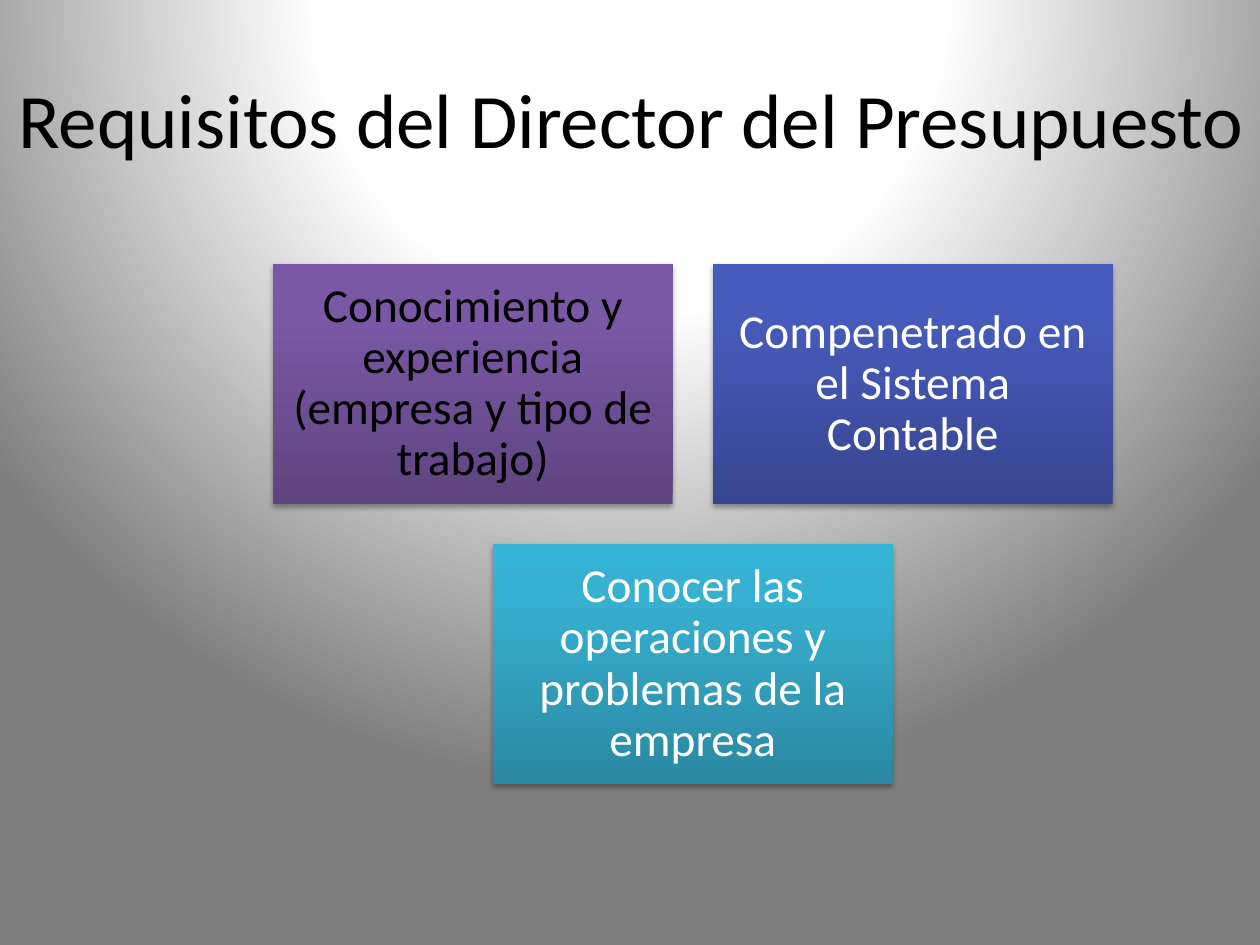
from lxml import etree
from pptx import Presentation
from pptx.dml.color import RGBColor
from pptx.enum.shapes import MSO_SHAPE as Shape
from pptx.enum.text import MSO_ANCHOR as Anchor, PP_ALIGN as Align
from pptx.oxml.ns import qn
from pptx.util import Cm, Pt

BOX_W, BOX_H, GAP = 8.06, 4.84, 0.81
LEFT, TOP = 5.5, 5.32
REQUIREMENTS = [
    # column, row, text, text colour, gradient from bottom to top
    (0, 0, "Conocimiento y experiencia (empresa y tipo de trabajo)",
     "000000", ("5F4480", "7B58A6", "7C57A8")),
    (1, 0, "Compenetrado en el Sistema Contable",
     "FFFFFF", ("374691", "475BBC", "455ABF")),
    (0.5, 1, "Conocer las operaciones y problemas de la empresa",
     "FFFFFF", ("2A88A2", "37B1D2", "34B4D6")),
]


def rgb(value):
    return RGBColor.from_string(value)


def add_node(parent, tag, **attrs):
    node = etree.SubElement(parent, qn(tag))
    for name, value in attrs.items():
        node.set(name, str(value))
    return node


def set_gradient(fill, owner, stops):
    """Give the fill its (percent, colour) stops; the direction is added after."""
    fill.gradient()
    grad = owner.find(".//" + qn("a:gradFill"))
    for child in list(grad):
        grad.remove(child)
    stop_list = add_node(grad, "a:gsLst")
    for percent, color in stops:
        stop = add_node(stop_list, "a:gs", pos=percent * 1000)
        add_node(stop, "a:srgbClr", val=color)
    return grad


def set_background(slide):
    grad = set_gradient(slide.background.fill, slide._element,
                        [(0, "FFFFFF"), (40, "FEFEFE"), (100, "7F7F7F")])
    circle = add_node(grad, "a:path", path="circle")
    add_node(circle, "a:fillToRect", l=50000, t=-80000, r=50000, b=180000)


def set_shadow(s):
    s.shadow.inherit = False
    effects = s._element.spPr.find(qn("a:effectLst"))
    shadow = add_node(effects, "a:outerShdw", blurRad=Pt(3.1), dist=Pt(1.8),
                      dir=5400000, rotWithShape=0)
    color = add_node(shadow, "a:srgbClr", val="000000")
    add_node(color, "a:alpha", val=35000)


def write(tf, text, size, color, **frame):
    for name, value in frame.items():
        setattr(tf, name, value)
    p = tf.paragraphs[0]
    p.alignment = Align.CENTER
    r = p.add_run()
    r.text = text
    for name, value in {"name": "Calibri", "size": Pt(size)}.items():
        setattr(r.font, name, value)
    r.font.color.rgb = rgb(color)
    return p


def add_title(slide, text):
    s = slide.shapes.add_textbox(Cm(0.08), Cm(1.32), Cm(25.32), Cm(2.13))
    write(s.text_frame, text, 44, "000000", word_wrap=False)


def add_box(slide, column, row, text, color, gradient):
    s = slide.shapes.add_shape(
        Shape.RECTANGLE, Cm(LEFT + column * (BOX_W + GAP)),
        Cm(TOP + row * (BOX_H + GAP)), Cm(BOX_W), Cm(BOX_H))
    grad = set_gradient(s.fill, s._element, zip((0, 80, 100), gradient))
    add_node(grad, "a:lin", ang=16200000, scaled=0)
    s.line.fill.background()
    set_shadow(s)
    margins = {f"margin_{side}": Cm(0.28)
               for side in ("left", "top", "right", "bottom")}
    p = write(s.text_frame, text, 27, color, word_wrap=True,
              vertical_anchor=Anchor.MIDDLE, **margins)
    p.line_spacing = 0.9


def main():
    prs = Presentation()
    prs.slide_width, prs.slide_height = Cm(25.4), Cm(19.05)
    slide = prs.slides.add_slide(prs.slide_layouts[6])
    set_background(slide)
    add_title(slide, "Requisitos del Director del Presupuesto")
    for requirement in REQUIREMENTS:
        add_box(slide, *requirement)
    prs.save("out.pptx")


if __name__ == "__main__":
    main()
